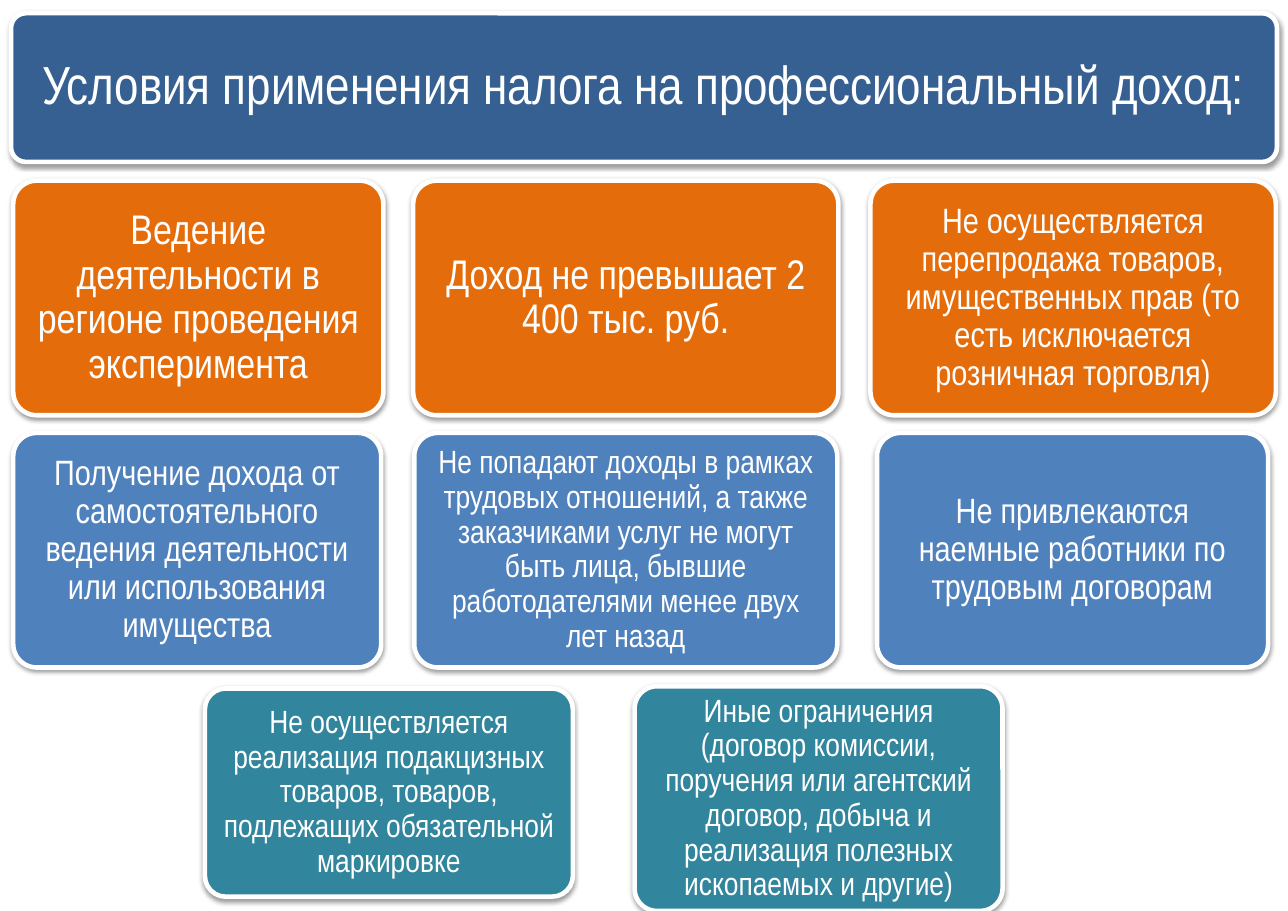
"""Build the slide on the conditions for applying the professional income tax."""
from lxml.etree import SubElement
from pptx import Presentation
from pptx.dml.color import RGBColor
from pptx.enum.shapes import MSO_SHAPE as Preset
from pptx.enum.text import MSO_ANCHOR as Anchor, PP_ALIGN as Align
from pptx.oxml.ns import qn
from pptx.util import Emu, Pt

PX = 9144
SLIDE_SIZE = (1169, 827)
FONT = "Arial Narrow"
COLORS = {
    "heading": "376092",
    "income": "E46C0A",
    "labour": "4F81BD",
    "limits": "31859C",
    "white": "FFFFFF",
    "shadow": "000000",
}

# Each row: colour, top, height, cards; each card: left, width, font size, text
ROWS = [
    ("heading", 12, 135, [
        (10, 1149, 35, "Условия применения налога на профессиональный доход:"),
    ]),
    ("income", 164, 213, [
        (12, 336, 27, "Ведение деятельности в регионе проведения эксперимента"),
        (375, 386, 27, "Доход не превышает 2 400 тыс. руб."),
        (790, 368, 23, "Не осуществляется перепродажа товаров, имущественных прав "
                       "(то есть исключается розничная торговля)"),
    ]),
    ("labour", 393, 213, [
        (12, 334, 23, "Получение дохода от самостоятельного ведения деятельности "
                      "или использования имущества"),
        (376, 384, 21, "Не попадают доходы в рамках трудовых отношений, а также "
                       "заказчиками услуг не могут быть лица, бывшие "
                       "работодателями менее двух лет назад"),
        (796, 355, 23, "Не привлекаются наемные работники по трудовым договорам"),
    ]),
    ("limits", 625, 189, [
        (186, 334, 21, "Не осуществляется реализация подакцизных товаров, товаров, "
                       "подлежащих обязательной маркировке"),
    ]),
    ("limits", 623, 204, [
        (576, 334, 21, "Иные ограничения (договор комиссии, поручения или агентский "
                       "договор, добыча и реализация полезных ископаемых и другие)"),
    ]),
]


def px(length):
    return Emu(length * PX)


def rgb(name):
    return RGBColor.from_string(COLORS[name])


def cast_shadow(card):
    card.shadow.inherit = False
    effects = card._element.spPr.find(qn("a:effectLst"))
    shadow = SubElement(effects, qn("a:outerShdw"), blurRad="40000", dist="20000",
                        dir="5400000", rotWithShape="0")
    tint = SubElement(shadow, qn("a:srgbClr"), val=COLORS["shadow"])
    SubElement(tint, qn("a:alpha"), val="38000")


def add_card(slide, color, left, top, width, height, size, text):
    card = slide.shapes.add_shape(Preset.ROUNDED_RECTANGLE,
                                  px(left), px(top), px(width), px(height))
    card.adjustments[0] = 0.1
    card.fill.solid()
    card.fill.fore_color.rgb = rgb(color)
    card.line.color.rgb = rgb("white")
    card.line.width = Pt(3)
    cast_shadow(card)

    frame = card.text_frame
    frame.word_wrap = True
    frame.vertical_anchor = Anchor.MIDDLE
    inset = Pt(0.3 * size)
    frame.margin_left = frame.margin_right = inset
    frame.margin_top = frame.margin_bottom = inset
    condition = frame.paragraphs[0]
    condition.text = text
    condition.alignment = Align.CENTER
    condition.line_spacing = 0.9
    condition.font.name = FONT
    condition.font.size = Pt(size)
    condition.font.color.rgb = rgb("white")


def main():
    deck = Presentation()
    deck.slide_width, deck.slide_height = map(px, SLIDE_SIZE)
    slide = deck.slides.add_slide(deck.slide_layouts[6])
    for color, top, height, cards in ROWS:
        for left, width, size, text in cards:
            add_card(slide, color, left, top, width, height, size, text)
    deck.save("out.pptx")


if __name__ == "__main__":
    main()
